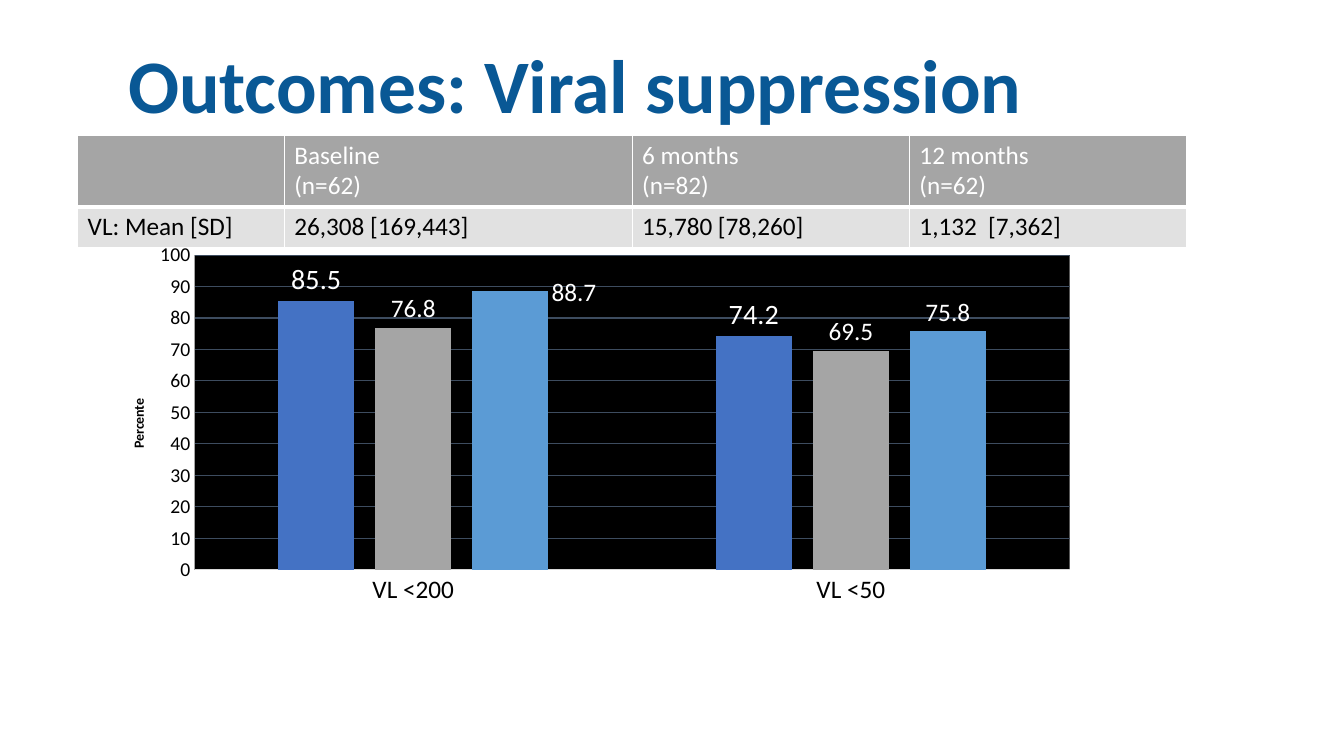
from lxml import etree
from pptx import Presentation
from pptx.chart.data import CategoryChartData
from pptx.dml.color import RGBColor
from pptx.enum.chart import XL_CHART_TYPE, XL_LABEL_POSITION, XL_TICK_MARK
from pptx.enum.text import MSO_ANCHOR, MSO_AUTO_SIZE, PP_ALIGN
from pptx.oxml import parse_xml
from pptx.oxml.ns import nsdecls, qn
from pptx.util import Inches, Pt

COLUMN = XL_CHART_TYPE.COLUMN_CLUSTERED
OUTSIDE_END = XL_LABEL_POSITION.OUTSIDE_END
NO_TICK = XL_TICK_MARK.NONE
MIDDLE = MSO_ANCHOR.MIDDLE
NO_AUTOFIT = MSO_AUTO_SIZE.NONE
LEFT = PP_ALIGN.LEFT

FONT = "Calibri"
TITLE_BLUE, WHITE, BLACK = "095895", "FFFFFF", "000000"
HEADER_GREY, BODY_GREY = "A5A5A5", "E1E1E1"
AXIS_GREY, GRID_BLUE = "D9D9D9", "3D4C5F"

COLUMN_WIDTHS = [2.05, 3.45, 2.75, 2.75]
ROW_HEIGHTS = [0.7, 0.4]
TABLE_ROWS = [
    [[], ["Baseline", "(n=62)"], ["6 months", "(n=82)"], ["12 months", "(n=62)"]],
    [["VL: Mean [SD]"], ["26,308 [169,443]"], ["15,780 [78,260]"], ["1,132  [7,362]"]],
]
CATEGORIES = ["VL <200", "VL <50"]
# Name, values, bar colour, label size
SERIES = [
    ("Baseline", (85.5, 74.2), "4472C4", 20),
    ("6 months", (76.8, 69.5), "A5A5A5", 18),
    ("12 months", (88.7, 75.8), "5B9BD5", 18),
]


def rgb(hex_color):
    return RGBColor.from_string(hex_color)


def style_font(font, size, color, bold=False):
    font.name = FONT
    font.size = Pt(size)
    font.bold = bold
    font.color.rgb = rgb(color)


def add_run(p, text, size, color, bold=False):
    r = p.add_run()
    r.text = text
    style_font(r.font, size, color, bold)


def style_line(line, color, width):
    line.color.rgb = rgb(color)
    line.width = Pt(width)


def add_title(s, text):
    sp = s.shapes.title
    sp.left, sp.top = Inches(1.17), Inches(0)
    sp.width, sp.height = Inches(11), Inches(1.76)
    tf = sp.text_frame
    tf.auto_size = NO_AUTOFIT
    tf.vertical_anchor = MIDDLE
    p = tf.paragraphs[0]
    p.alignment = LEFT
    p.line_spacing = 0.9
    add_run(p, text, 54, TITLE_BLUE, bold=True)


def set_borders(cell, bottom_width):
    tc_pr = cell._tc.get_or_add_tcPr()
    for side, width in (("L", 1), ("R", 1), ("T", 1), ("B", bottom_width)):
        tc_pr.append(parse_xml(
            f'<a:ln{side} {nsdecls("a")} w="{Pt(width)}"><a:solidFill>'
            f'<a:srgbClr val="{WHITE}"/></a:solidFill></a:ln{side}>'))


def fill_cell(cell, lines, fill, color, bottom_width):
    set_borders(cell, bottom_width)
    cell.fill.solid()
    cell.fill.fore_color.rgb = rgb(fill)
    tf = cell.text_frame
    for i, line in enumerate(lines):
        p = tf.add_paragraph() if i else tf.paragraphs[0]
        add_run(p, line, 18, color)


def add_viral_load_table(s):
    table = s.shapes.add_table(
        len(TABLE_ROWS), len(COLUMN_WIDTHS), Inches(0.77), Inches(1.34),
        Inches(sum(COLUMN_WIDTHS)), Inches(sum(ROW_HEIGHTS))).table
    table.horz_banding = False
    for column, width in zip(table.columns, COLUMN_WIDTHS):
        column.width = Inches(width)
    styles = [(HEADER_GREY, WHITE, 3), (BODY_GREY, BLACK, 1)]
    for row, height, texts, style in zip(table.rows, ROW_HEIGHTS, TABLE_ROWS, styles):
        row.height = Inches(height)
        for cell, lines in zip(row.cells, texts):
            fill_cell(cell, lines, *style)


def manual_layout(**values):
    layout = etree.Element(qn("c:layout"))
    manual = etree.SubElement(layout, qn("c:manualLayout"))
    for tag, value in values.items():
        etree.SubElement(manual, qn(f"c:{tag}")).set("val", str(value))
    return layout


def style_plot_area(chart):
    area = chart._chartSpace.chart.plotArea
    for old in area.findall(qn("c:layout")):
        area.remove(old)
    area.insert(0, manual_layout(layoutTarget="inner", xMode="edge", yMode="edge",
                                 x=0.07, y=0.059, w=0.908, h=0.735))
    area.append(parse_xml(
        f'<c:spPr {nsdecls("c", "a")}><a:solidFill>'
        f'<a:srgbClr val="{BLACK}"/></a:solidFill></c:spPr>'))


def style_axes(chart):
    cat, val = chart.category_axis, chart.value_axis
    for axis, size in ((cat, 18), (val, 14)):
        axis.major_tick_mark = axis.minor_tick_mark = NO_TICK
        style_font(axis.tick_labels.font, size, BLACK)
    style_line(cat.format.line, AXIS_GREY, 0.75)
    val.format.line.fill.background()
    val.minimum_scale, val.maximum_scale, val.major_unit = 0, 100, 10
    style_line(val.major_gridlines.format.line, GRID_BLUE, 0.75)
    tf = val.axis_title.text_frame
    tf._txBody.bodyPr.set("rot", "-5400000")
    add_run(tf.paragraphs[0], "Percente", 10, BLACK, bold=True)


def style_series(series, color, label_size):
    series.format.fill.solid()
    series.format.fill.fore_color.rgb = rgb(color)
    labels = series.data_labels
    labels.show_value = True
    labels.position = OUTSIDE_END
    style_font(labels.font, label_size, WHITE)


def shift_label(series, index, size, dx, dy):
    label = series.points[index].data_label
    style_font(label.font, size, WHITE)
    label.position = OUTSIDE_END
    element = series.data_labels._element.find(qn("c:dLbl"))
    element.insert(1, manual_layout(x=dx, y=dy))


def add_suppression_chart(s):
    data = CategoryChartData()
    data.categories = CATEGORIES
    for name, values, _, _ in SERIES:
        data.add_series(name, values)
    chart = s.shapes.add_chart(COLUMN, Inches(1.26), Inches(2.28),
                               Inches(9.56), Inches(4.25), data).chart
    style_font(chart.font, 10, BLACK)
    chart.has_title = False
    chart.has_legend = False
    plot = chart.plots[0]
    plot.vary_by_categories = False
    plot.gap_width, plot.overlap = 219, -27
    for series, (_, _, color, label_size) in zip(plot.series, SERIES):
        style_series(series, color, label_size)
    # The tallest bar carries its label on the right
    shift_label(plot.series[2], 0, 18, 0.066, 0.05)
    style_axes(chart)
    style_plot_area(chart)


def main():
    prs = Presentation()
    prs.slide_width, prs.slide_height = Inches(13.33), Inches(7.5)
    s = prs.slides.add_slide(prs.slide_layouts[5])
    add_title(s, "Outcomes: Viral suppression")
    add_viral_load_table(s)
    add_suppression_chart(s)
    prs.save("out.pptx")


if __name__ == "__main__":
    main()
